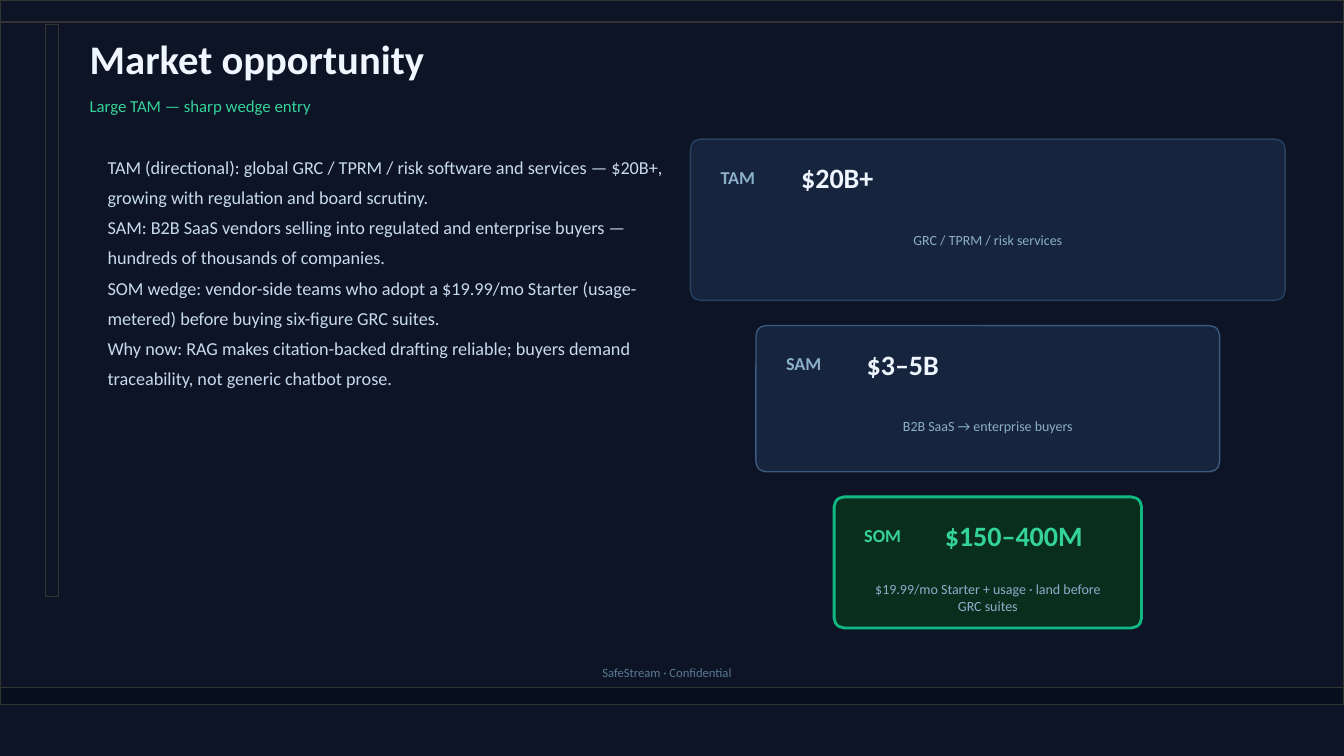
from pptx import Presentation
from pptx.dml.color import RGBColor
from pptx.enum.shapes import MSO_SHAPE
from pptx.enum.text import MSO_ANCHOR, MSO_AUTO_SIZE, PP_ALIGN
from pptx.util import Pt

# Content
TITLE = "Market opportunity"
SUBTITLE = "Large TAM — sharp wedge entry"
FOOTER = "SafeStream · Confidential"
POINTS = [
    "TAM (directional): global GRC / TPRM / risk software and services — $20B+, "
    "growing with regulation and board scrutiny.",
    "SAM: B2B SaaS vendors selling into regulated and enterprise buyers — "
    "hundreds of thousands of companies.",
    "SOM wedge: vendor-side teams who adopt a $19.99/mo Starter (usage-metered) "
    "before buying six-figure GRC suites.",
    "Why now: RAG makes citation-backed drafting reliable; buyers demand "
    "traceability, not generic chatbot prose.",
]
# label, value, note, width, fill, line, line width, label colour, value colour
MARKETS = [
    ("TAM", "$20B+", "GRC / TPRM / risk services",
     424.8, "card", "tam_line", 1, "muted", "white"),
    ("SAM", "$3–5B", "B2B SaaS → enterprise buyers",
     331.2, "card", "sam_line", 1, "muted", "white"),
    ("SOM", "$150–400M", "$19.99/mo Starter + usage · land before GRC suites",
     219.6, "som_card", "som_line", 2, "green", "green"),
]

# Style
FONT = "Calibri"
COLOURS = {
    "background": "0D1425", "frame": "333333", "bottom": "080F1C",
    "white": "F0F6FF", "body": "C8DAF0", "muted": "8BAFC8", "footer": "5A7A94",
    "green": "34D399", "card": "16253D", "tam_line": "2A4060",
    "sam_line": "3A5A80", "som_card": "0A2E1E", "som_line": "10B981",
}
SLIDE_WIDTH, SLIDE_HEIGHT = 960, 540
CARD_CENTRE, CARD_TOP, CARD_GAP = 705.6, 99.36, 18
CARD_HEIGHT, CARD_STEP, CORNER = 115.2, 10.8, 7.2


def colour(name):
    return RGBColor.from_string(COLOURS[name])


def write(shape, texts, size, name, bold=False, align=PP_ALIGN.LEFT,
          anchor=MSO_ANCHOR.MIDDLE, spacing=1.0):
    frame = shape.text_frame
    frame.word_wrap = True
    frame.auto_size = MSO_AUTO_SIZE.NONE
    frame.vertical_anchor = anchor
    for index, text in enumerate(texts):
        paragraph = frame.add_paragraph() if index else frame.paragraphs[0]
        paragraph.alignment = align
        paragraph.line_spacing = spacing
        run = paragraph.add_run()
        run.text = text
        run.font.name = FONT
        run.font.size = Pt(size)
        run.font.bold = bold
        run.font.color.rgb = colour(name)


def add_text(box, texts, size, name, **style):
    shape = slide.shapes.add_textbox(*map(Pt, box))
    write(shape, texts, size, name, **style)


def add_panel(kind, box, fill, line, line_width=1):
    shape = slide.shapes.add_shape(kind, *map(Pt, box))
    shape.shadow.inherit = False
    if fill:
        shape.fill.solid()
        shape.fill.fore_color.rgb = colour(fill)
    else:
        shape.fill.background()
    shape.line.color.rgb = colour(line)
    shape.line.width = Pt(line_width)
    return shape


presentation = Presentation()
presentation.slide_width = Pt(SLIDE_WIDTH)
presentation.slide_height = Pt(SLIDE_HEIGHT)
slide = presentation.slides.add_slide(presentation.slide_layouts[5])
slide.background.fill.solid()
slide.background.fill.fore_color.rgb = colour("background")

# Frame, top band, side bar and bottom band
for box, fill in [
    ((0, 0, SLIDE_WIDTH, 503.3), None),
    ((0, 0, SLIDE_WIDTH, 15.8), None),
    ((32.4, 17.3, 9.4, 409), None),
    ((0, 491, SLIDE_WIDTH, 12.3), "bottom"),
]:
    add_panel(MSO_SHAPE.RECTANGLE, box, fill, "frame")

# Title and subtitle
title = slide.shapes.title
title.left, title.top, title.width, title.height = map(Pt, (56.9, 19.4, 838.8, 44.6))
write(title, [TITLE], 29, "white", bold=True)
add_text((56.9, 62.6, 550, 25.9), [SUBTITLE], 12, "green")

# Market explanation
add_text((69.8, 102.2, 421.2, 367.2), POINTS, 13, "body",
         anchor=MSO_ANCHOR.TOP, spacing=1.38)

# Funnel of market cards, each narrower and shorter than the last
top = CARD_TOP
for index, market in enumerate(MARKETS):
    label, value, note, width, fill, line, line_width, label_colour, value_colour = market
    height = CARD_HEIGHT - index * CARD_STEP
    left = CARD_CENTRE - width / 2
    card = add_panel(MSO_SHAPE.ROUNDED_RECTANGLE, (left, top, width, height),
                     fill, line, line_width)
    card.adjustments[0] = CORNER / height
    add_text((left + 14.4, top + 10.8, 64.8, 32.4), [label], 13, label_colour, bold=True)
    add_text((left + 72, top + 8.64, width - 86.4, 37.4), [value], 20, value_colour,
             bold=True)
    add_text((left + 14.4, top + 51.84, width - 28.8, 39.6), [note], 10, "muted",
             align=PP_ALIGN.CENTER)
    top += height + CARD_GAP

# Footer
add_text((32.4, 469.4, 887.8, 21.6), [FOOTER], 9, "footer", align=PP_ALIGN.CENTER)

presentation.save("out.pptx")
